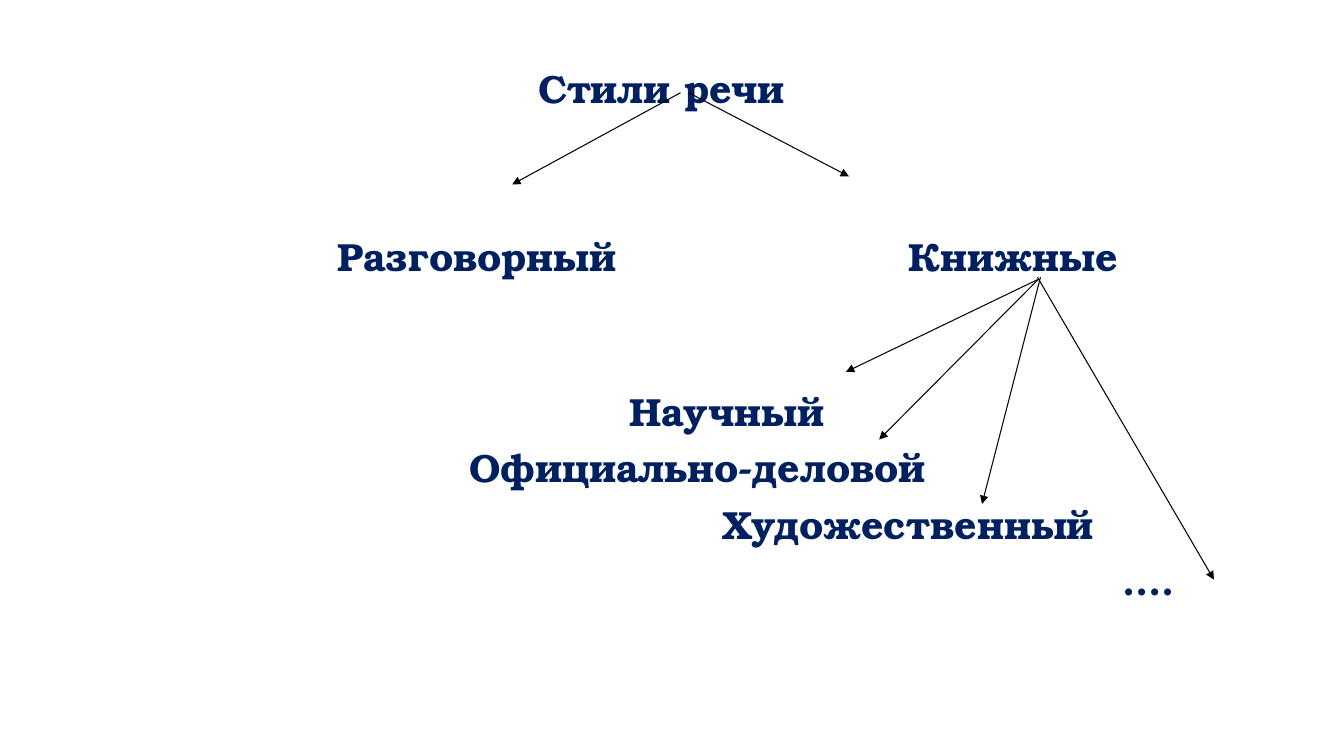
from lxml.etree import SubElement
from pptx import Presentation
from pptx.dml.color import RGBColor
from pptx.enum.shapes import MSO_CONNECTOR
from pptx.enum.text import MSO_ANCHOR, MSO_AUTO_SIZE, PP_ALIGN
from pptx.oxml.ns import qn
from pptx.util import Inches, Pt

COLORS = {"text": "002060", "arrow": "000000"}
LABEL_HEIGHT = 0.5

# Wording, then horizontal centre, vertical centre and width in inches
HEADING = ("Стили речи", 6.56, 0.87, 2.6)
STYLES = [
    ("Разговорный", 4.73, 2.54, 2.9),
    ("Книжные", 10.05, 2.54, 2.2),
]
BOOK_TOP, BOOK_STEP = 4.08, 0.556
BOOK_STYLES = [
    ("Научный", 7.21, 2.1),
    ("Официально-деловой", 6.92, 4.7),
    ("Художественный", 9.01, 3.9),
    ("….", 11.39, 0.7),
]

# Start and end of each arrow
ARROWS = [
    ((6.75, 0.92), (5.08, 1.83)),
    ((6.83, 0.92), (8.42, 1.75)),
    ((10.3, 2.77), (8.39, 3.69)),
    ((10.3, 2.77), (8.72, 4.36)),
    ((10.32, 2.75), (9.74, 5)),
    ((10.29, 2.75), (12.04, 5.75)),
]

FRAME_FORMAT = {
    "margin_left": 0, "margin_right": 0, "margin_top": 0, "margin_bottom": 0,
    "word_wrap": True, "auto_size": MSO_AUTO_SIZE.NONE,
    "vertical_anchor": MSO_ANCHOR.MIDDLE,
}
PARAGRAPH_FORMAT = {"alignment": PP_ALIGN.CENTER, "line_spacing": 1.0,
                    "space_before": Pt(0)}
FONT_FORMAT = {"name": "TeX Gyre Bonum", "size": Pt(28), "bold": True}


def apply(target, values):
    for attribute, value in values.items():
        setattr(target, attribute, value)


def write_label(label, wording, center_x, center_y, width):
    apply(label, {
        "left": Inches(center_x - width / 2),
        "top": Inches(center_y - LABEL_HEIGHT / 2),
        "width": Inches(width), "height": Inches(LABEL_HEIGHT),
    })
    frame = label.text_frame
    frame.text = wording
    apply(frame, FRAME_FORMAT)
    paragraph = frame.paragraphs[0]
    apply(paragraph, PARAGRAPH_FORMAT)
    font = paragraph.runs[0].font
    apply(font, FONT_FORMAT)
    font.color.rgb = RGBColor.from_string(COLORS["text"])


def draw_arrow(slide, start, end):
    arrow = slide.shapes.add_connector(
        MSO_CONNECTOR.STRAIGHT, *(Inches(n) for n in start + end))
    arrow.line.width = Pt(0.75)
    arrow.line.color.rgb = RGBColor.from_string(COLORS["arrow"])
    SubElement(arrow.line._get_or_add_ln(), qn("a:tailEnd"), type="triangle")
    SubElement(arrow._element.spPr, qn("a:effectLst"))


def main():
    deck = Presentation()
    deck.slide_width, deck.slide_height = Inches(13.33), Inches(7.5)
    slide = deck.slides.add_slide(deck.slide_layouts[5])

    # Heading and the tree of styles
    write_label(slide.shapes.title, *HEADING)
    book_labels = [(wording, x, BOOK_TOP + row * BOOK_STEP, width)
                   for row, (wording, x, width) in enumerate(BOOK_STYLES)]
    for label in STYLES + book_labels:
        write_label(slide.shapes.add_textbox(0, 0, 0, 0), *label)

    # Arrows between the levels
    for start, end in ARROWS:
        draw_arrow(slide, start, end)

    deck.save("out.pptx")


if __name__ == "__main__":
    main()
